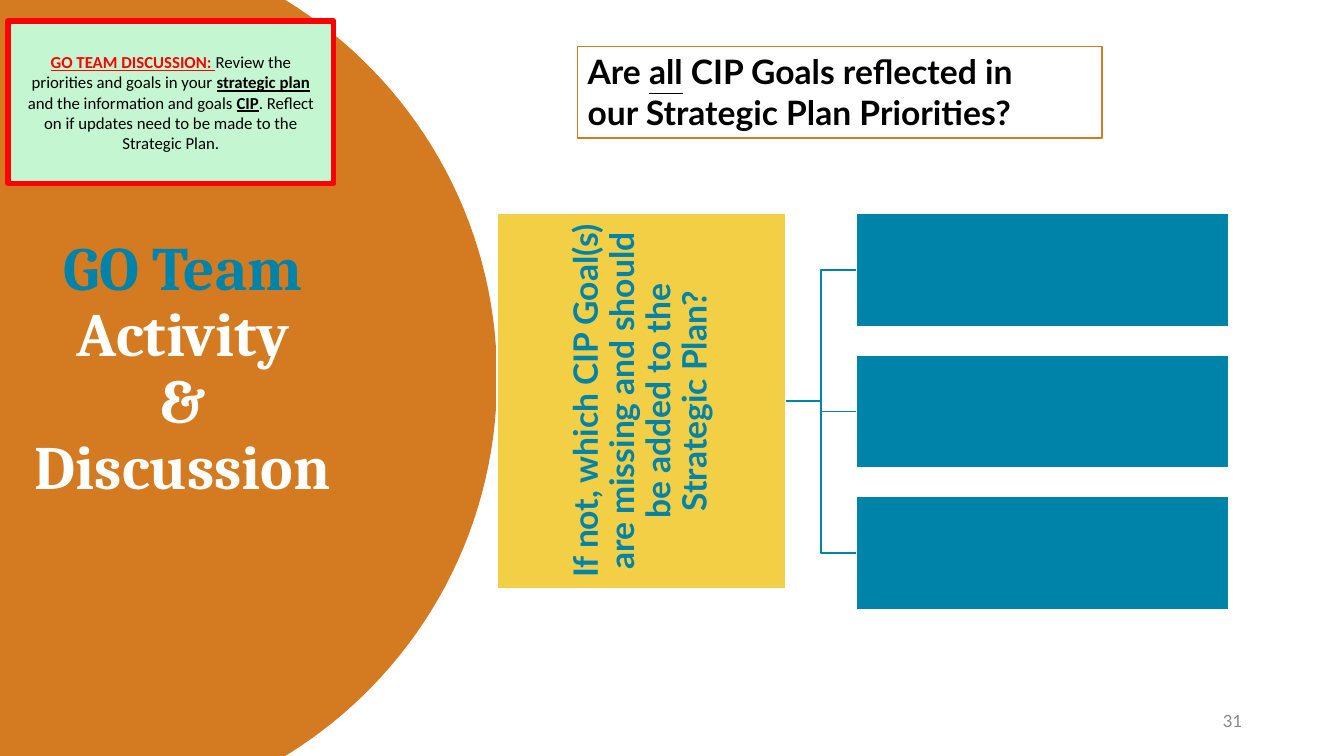
from dataclasses import dataclass

from lxml import etree
from pptx import Presentation
from pptx import util as u
from pptx.dml.color import RGBColor
from pptx.enum import shapes, text
from pptx.oxml.ns import qn


@dataclass(frozen=True)
class Theme:
    orange: str = "D47B22"
    blue: str = "0083A9"
    yellow: str = "F3CF45"
    mint: str = "C3F6D1"
    red: str = "FF0000"
    black: str = "000000"
    white: str = "FFFFFF"
    gray: str = "898989"
    title_size: int = 44
    head_size: int = 24
    note_size: int = 12
    title_font: str = "Cambria"
    body_font: str = "Lato"
    note_font: str = "Calibri"


THEME = Theme()
CENTER, LEFT, RIGHT = text.PP_ALIGN.CENTER, text.PP_ALIGN.LEFT, text.PP_ALIGN.RIGHT


def inches(*lengths):
    return [u.Inches(length) for length in lengths]


def paint(shape, fill=None, line=None, width=1):
    shape.shadow.inherit = False
    if fill:
        shape.fill.solid()
        shape.fill.fore_color.rgb = RGBColor.from_string(fill)
    else:
        shape.fill.background()
    if line:
        shape.line.color.rgb = RGBColor.from_string(line)
        shape.line.width = u.Pt(width)
    else:
        shape.line.fill.background()


def add_box(page, box, fill=None, line=None, width=1):
    shape = page.shapes.add_shape(shapes.MSO_SHAPE.RECTANGLE, *inches(*box))
    paint(shape, fill, line, width)
    return shape


def set_frame(shape, anchor=text.MSO_ANCHOR.MIDDLE, margin=None):
    frame = shape.text_frame
    frame.word_wrap = True
    frame.auto_size = text.MSO_AUTO_SIZE.NONE
    frame.vertical_anchor = anchor
    if margin is not None:
        frame.margin_left = frame.margin_right = u.Inches(margin)
        frame.margin_top = frame.margin_bottom = u.Inches(margin)
    return frame


def format_para(para, font, size, color, align, bold=False, spacing=None):
    para.alignment = align
    para.line_spacing = spacing
    para.font.name = font
    para.font.size = u.Pt(size)
    para.font.bold = bold
    para.font.color.rgb = RGBColor.from_string(color)


def add_span(para, words, **marks):
    span = para.add_run()
    span.text = words
    for name, value in marks.items():
        setattr(span.font, name, value)
    return span


def add_semicircle(page, box):
    """Orange panel whose right edge bulges outwards."""
    left, top, width, height = box
    shoulder, pull, steps = 0.574 * width, 0.83 * width, 32
    middle = top + height / 2
    upper = []
    for step in range(steps + 1):
        t = step / steps
        weights = ((1 - t) ** 3, 3 * t * (1 - t) ** 2, 3 * t * t * (1 - t), t ** 3)
        xs = (shoulder, pull, width, width)
        ys = (0, 0.103 * height, 0.288 * height, height / 2)
        upper.append((left + sum(w * x for w, x in zip(weights, xs)),
                      top + sum(w * y for w, y in zip(weights, ys))))
    lower = [(x, 2 * middle - y) for x, y in reversed(upper[:-1])]
    builder = page.shapes.build_freeform(*inches(left, top), scale=1.0)
    builder.add_line_segments([inches(*point) for point in upper + lower]
                              + [inches(left, top + height)])
    paint(builder.convert_to_shape(), THEME.orange)


def add_title(page, box):
    title = page.shapes.title
    page.shapes.element.append(title.element)  # in front of the semicircle
    title.left, title.top, title.width, title.height = inches(*box)
    para = set_frame(title).paragraphs[0]
    format_para(para, THEME.title_font, THEME.title_size, THEME.white,
                CENTER, True, 0.9)
    first = add_span(para, "GO Team")
    first.font.color.rgb = RGBColor.from_string(THEME.blue)
    for line in ("Activity", "&", "Discussion"):
        para.add_line_break()
        add_span(para, line)


def add_discussion_note(page, box):
    note = add_box(page, box, THEME.mint, THEME.red, 4)
    para = set_frame(note, margin=0.16).paragraphs[0]
    format_para(para, THEME.note_font, THEME.note_size, THEME.black, CENTER)
    strong = {"bold": True, "underline": True}
    lead = add_span(para, "GO TEAM DISCUSSION: ", **strong)
    lead.font.color.rgb = RGBColor.from_string(THEME.red)
    add_span(para, "Review the priorities and goals in your ")
    add_span(para, "strategic plan ", **strong)
    add_span(para, "and the information and goals ")
    add_span(para, "CIP", **strong)
    add_span(para, ". Reflect on if updates need to be made to the Strategic Plan.")


def add_question(page, box):
    frame = set_frame(add_box(page, box, line=THEME.orange), text.MSO_ANCHOR.TOP)
    first, second = frame.paragraphs[0], frame.add_paragraph()
    for para in (first, second):
        format_para(para, THEME.body_font, THEME.head_size, THEME.black, LEFT, True)
    add_span(first, "Are ")
    add_span(first, "all", underline=True)
    add_span(first, " CIP Goals reflected in")
    add_span(second, "our Strategic Plan Priorities?")


def add_goal_tree(page, box):
    """Upright question on the left, branching to three goal boxes."""
    left, top, width, height = box
    root_width, root_height = 0.394 * width, 0.949 * height
    goal_width, goal_height, pitch = 0.509 * width, 0.286 * height, 0.358 * height
    goal_left, root_middle = left + width - goal_width, top + root_height / 2

    # Branches
    for row in range(3):
        goal_middle = top + row * pitch + goal_height / 2
        branch = page.shapes.add_connector(
            shapes.MSO_CONNECTOR.ELBOW,
            *inches(left + root_width, root_middle, goal_left, goal_middle))
        branch.line.color.rgb = RGBColor.from_string(THEME.blue)
        branch.line.width = u.Pt(1)
        etree.SubElement(branch.element.spPr, qn("a:effectLst"))

    # Root, turned to read upwards
    root = add_box(page, (left + (root_width - root_height) / 2,
                          top + (root_height - root_width) / 2,
                          root_height, root_width), THEME.yellow, THEME.white)
    root.rotation = 270
    para = set_frame(root, margin=0.02).paragraphs[0]
    format_para(para, THEME.body_font, THEME.head_size, THEME.blue, CENTER, True, 0.9)
    add_span(para, "If not, which CIP Goal(s) are missing and should "
                   "be added to the Strategic Plan?")

    # Goals
    for row in range(3):
        add_box(page, (goal_left, top + row * pitch, goal_width, goal_height),
                THEME.blue, THEME.white)


def add_page_number(page, box):
    number = page.shapes.add_textbox(*inches(*box))
    para = set_frame(number).paragraphs[0]
    format_para(para, THEME.body_font, THEME.note_size, THEME.gray, RIGHT)
    add_span(para, "31")


def main():
    deck = Presentation()
    deck.slide_width, deck.slide_height = inches(13.33, 7.5)
    page = deck.slides.add_slide(deck.slide_layouts[5])
    add_semicircle(page, (0, 0, 4.93, 7.5))
    add_title(page, (0.2, 2.11, 3.23, 3.12))
    add_page_number(page, (9.42, 6.95, 3, 0.4))
    add_discussion_note(page, (0.08, 0.21, 3.23, 1.61))
    add_question(page, (5.73, 0.46, 5.2, 0.91))
    add_goal_tree(page, (4.93, 2.12, 7.26, 3.92))
    deck.save("out.pptx")


if __name__ == "__main__":
    main()
